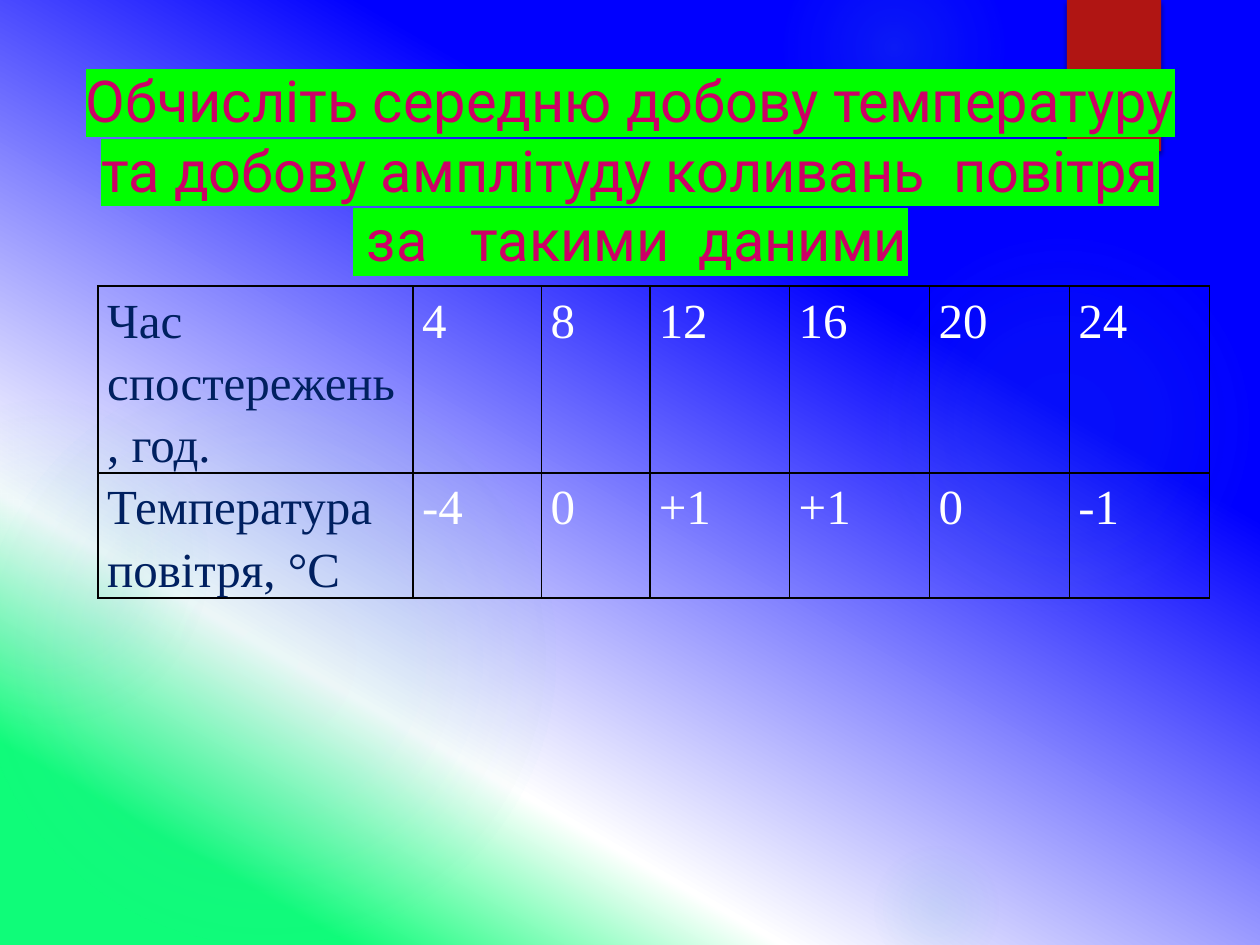
from lxml import etree
from pptx import Presentation
from pptx.dml.color import RGBColor
from pptx.enum.shapes import MSO_SHAPE
from pptx.enum.text import PP_ALIGN
from pptx.oxml.ns import qn
from pptx.util import Cm, Pt

OVAL = MSO_SHAPE.OVAL
RECTANGLE = MSO_SHAPE.RECTANGLE
CENTER = PP_ALIGN.CENTER

COLORS = {
    "blue": "0000FF",
    "white": "FFFFFF",
    "green": "0FFC79",
    "glow": "50B9C1",
    "red": "B01513",
    "black": "000000",
    "navy": "002060",
    "magenta": "CC0066",
    "highlight": "00FF00",
}


def add_element(parent, tag, **attributes):
    values = {name: str(value) for name, value in attributes.items()}
    return etree.SubElement(parent, qn(tag), values)


def set_gradient(fill, properties, stops, angle=None):
    fill.gradient()
    gradient = properties.find(qn("a:gradFill"))
    for child in list(gradient):
        gradient.remove(child)
    stop_list = add_element(gradient, "a:gsLst")
    for position, color, alpha in stops:
        stop = add_element(stop_list, "a:gs", pos=position * 1000)
        color_element = add_element(stop, "a:srgbClr", val=COLORS[color])
        add_element(color_element, "a:alpha", val=alpha * 1000)
    if angle is None:
        path = add_element(gradient, "a:path", path="circle")
        add_element(path, "a:fillToRect", l=50000, t=50000, r=50000, b=50000)
    else:
        add_element(gradient, "a:lin", ang=angle * 60000, scaled=0)


presentation = Presentation()
presentation.slide_width = Cm(25.4)
presentation.slide_height = Cm(19.05)
slide = presentation.slides.add_slide(presentation.slide_layouts[6])

background_fill = slide.background.fill
background_fill.solid()
background_properties = slide.element.find(".//" + qn("p:bgPr"))
set_gradient(
    background_fill,
    background_properties,
    [(31, "blue", 100), (73, "white", 91), (88, "green", 100)],
    angle=120,
)

glows = [
    (17.5, 4.65, 7.82, 7, 6, 69),
    (15.8, -1.27, 4.45, 14, 7, 73),
    (17.5, 16.94, 2.74, 9, 5, 66),
    (-0.43, 7.42, 11.63, 11, 10, 75),
    (-2.34, 8.05, 6.55, 8, 8, 72),
]
for left, top, size, center_alpha, middle_alpha, edge in glows:
    shape = slide.shapes.add_shape(OVAL, Cm(left), Cm(top), Cm(size), Cm(size))
    shape.shadow.inherit = False
    shape.line.fill.background()
    stops = [(0, "glow", center_alpha), (36, "glow", middle_alpha), (edge, "glow", 0)]
    set_gradient(shape.fill, shape.element.spPr, stops)

ribbon = slide.shapes.add_shape(RECTANGLE, Cm(21.51), Cm(0), Cm(1.9), Cm(3.05))
ribbon.fill.solid()
ribbon.fill.fore_color.rgb = RGBColor.from_string(COLORS["red"])
ribbon.line.fill.background()
ribbon.shadow.inherit = False
effects = ribbon.element.spPr.find(qn("a:effectLst"))
shadow = add_element(
    effects, "a:outerShdw", blurRad=Pt(3), dist=Pt(2), dir=90 * 60000, rotWithShape=0
)
shadow_color = add_element(shadow, "a:srgbClr", val=COLORS["black"])
add_element(shadow_color, "a:alpha", val=45000)

column_widths = [6.35, 2.59, 2.18] + [2.82] * 4
row_heights = [3.76, 2.5]
observations = [
    ["Час спостережень, год.", "4", "8", "12", "16", "20", "24"],
    ["Температура повітря, °С", "-4", "0", "+1", "+1", "0", "-1"],
]
table = slide.shapes.add_table(
    len(row_heights), len(column_widths), Cm(1.98), Cm(5.77),
    Cm(sum(column_widths)), Cm(sum(row_heights)),
).table
table.first_row = False
table.horz_banding = False
for column, width in zip(table.columns, column_widths):
    column.width = Cm(width)
for row, height, texts in zip(table.rows, row_heights, observations):
    row.height = Cm(height)
    for index, (cell, text) in enumerate(zip(row.cells, texts)):
        cell.margin_left = cell.margin_right = Cm(0.18)
        cell.margin_top = cell.margin_bottom = 0
        cell_properties = cell._tc.get_or_add_tcPr()
        for side in ("a:lnL", "a:lnR", "a:lnT", "a:lnB"):
            border = add_element(cell_properties, side, w=Pt(1))
            border_fill = add_element(border, "a:solidFill")
            add_element(border_fill, "a:srgbClr", val=COLORS["black"])
        cell.fill.background()
        cell.text_frame.text = text
        paragraph = cell.text_frame.paragraphs[0]
        paragraph.line_spacing = 1.15
        font = paragraph.runs[0].font
        font.size = Pt(28)
        font.name = "Times New Roman"
        color = "white" if index else "navy"
        font.color.rgb = RGBColor.from_string(COLORS[color])

title = slide.shapes.add_textbox(Cm(0.79), Cm(1.19), Cm(23.83), Cm(2.97))
title.text_frame.word_wrap = True
title.text_frame.text = (
    "Обчисліть середню добову температуру та добову амплітуду коливань  повітря\n"
    " за   такими  даними"
)
for paragraph in title.text_frame.paragraphs:
    paragraph.alignment = CENTER
    run = paragraph.runs[0]
    run.font.size = Pt(33)
    run.font.color.rgb = RGBColor.from_string(COLORS["magenta"])
    highlight = add_element(run.font._element, "a:highlight")
    add_element(highlight, "a:srgbClr", val=COLORS["highlight"])
    run.font.name = "Roboto"

presentation.save("out.pptx")
